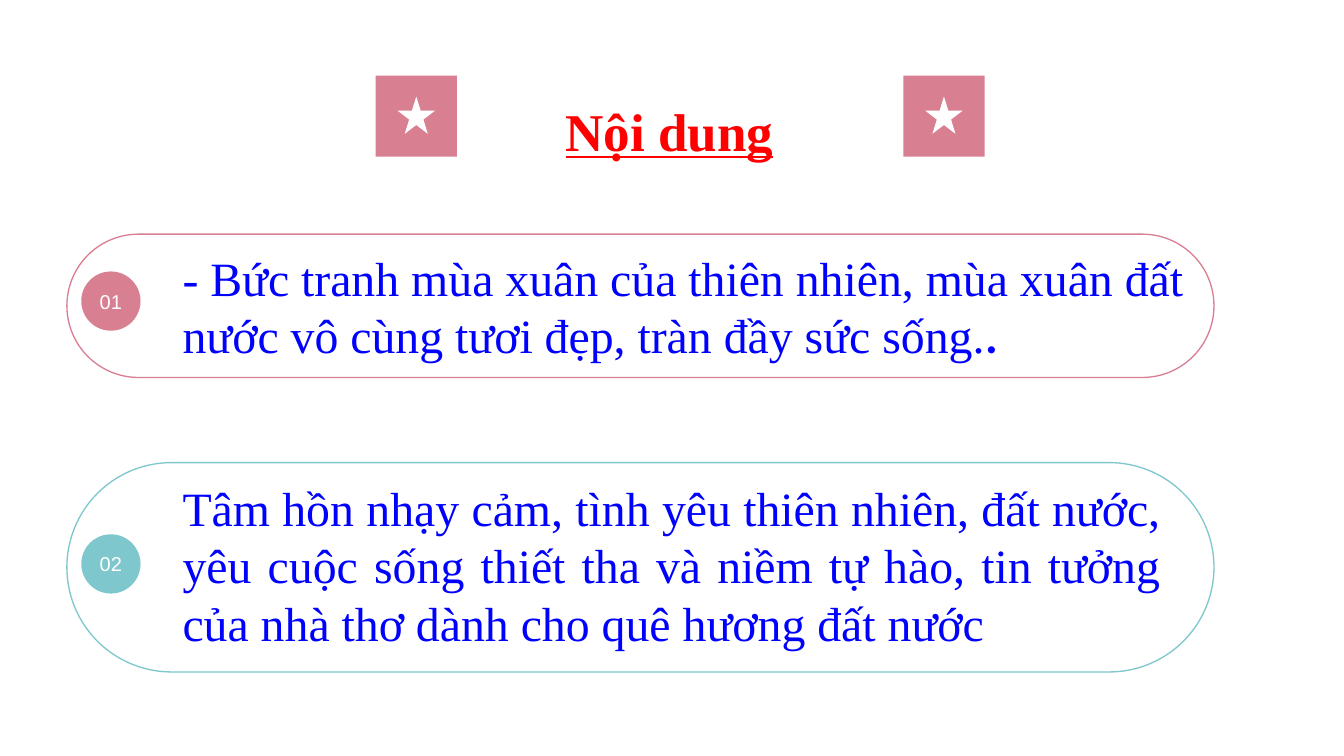
import pptx
import pptx.util
import pptx.dml.color
import pptx.enum.shapes
import pptx.enum.text

Inches, Pt = pptx.util.Inches, pptx.util.Pt
RGB = pptx.dml.color.RGBColor.from_string
SHAPE = pptx.enum.shapes.MSO_SHAPE
ALIGN = pptx.enum.text.PP_ALIGN
ANCHOR = pptx.enum.text.MSO_ANCHOR
COLORS = {"pink": "D97F92", "teal": "7EC7CD", "red": "FF0000",
          "blue": "0000FF", "white": "FFFFFF"}

prs = pptx.Presentation()
prs.slide_width, prs.slide_height = Inches(14.06), Inches(7.91)
s = prs.slides.add_slide(prs.slide_layouts[5])


def add_text(sp, text, size=36, font="Times New Roman", color="blue", bold=False,
             underline=False, align=ALIGN.LEFT, anchor=ANCHOR.TOP,
             spacing=1.0, inset=(0.13, 0.06), tail=""):
    tf = sp.text_frame
    tf.word_wrap = True
    tf.auto_size = pptx.enum.text.MSO_AUTO_SIZE.NONE
    tf.vertical_anchor = anchor
    tf.margin_left = tf.margin_right = Inches(inset[0])
    tf.margin_top = tf.margin_bottom = Inches(inset[1])
    p = tf.paragraphs[0]
    p.alignment, p.line_spacing = align, spacing
    # The tail is a bold ending in a second font
    for part, name, heavy in ((text, font, bold), (tail, "Calibri", True)):
        if part:
            r = p.add_run()
            r.text = part
            r.font.name, r.font.size = name, Pt(size)
            r.font.bold, r.font.underline = heavy, underline
            r.font.color.rgb = RGB(COLORS[color])


def add_shape(kind, x, y, w, h, fill=None, line=None):
    sp = s.shapes.add_shape(kind, Inches(x), Inches(y), Inches(w), Inches(h))
    sp.shadow.inherit = False
    if fill:
        sp.fill.solid()
        sp.fill.fore_color.rgb = RGB(COLORS[fill])
    else:
        sp.fill.background()
    if line:
        sp.line.color.rgb = RGB(COLORS[line])
        sp.line.width = Pt(1)
    else:
        sp.line.fill.background()
    return sp


# Title
title = s.shapes.title
title.left, title.top = Inches(4.28), Inches(0.7)
title.width, title.height = Inches(5.45), Inches(0.97)
add_text(title, "Nội dung", size=40, color="red", bold=True, underline=True,
         align=ALIGN.CENTER, spacing=1.4)

# Star badges on both sides of the title
for x in (3.93, 9.45):
    add_shape(SHAPE.RECTANGLE, x, 0.79, 0.85, 0.85, fill="pink")
    add_shape(SHAPE.STAR_5_POINT, x + 0.23, 1.01, 0.39, 0.39, fill="white")

# Numbered points: color, pill top and height, badge top, text box, text
points = [
    ("pink", 2.45, 1.5, 2.84, (2.54, 11, 1.34), ALIGN.LEFT,
     "- Bức tranh mùa xuân của thiên nhiên, mùa xuân đất nước vô cùng "
     "tươi đẹp, tràn đầy sức sống.", "."),
    ("teal", 4.84, 2.19, 5.59, (4.95, 10.5, 1.94), ALIGN.JUSTIFY,
     "Tâm hồn nhạy cảm, tình yêu thiên nhiên, đất nước, yêu cuộc sống "
     "thiết tha và niềm tự hào, tin tưởng của nhà thơ dành cho quê hương "
     "đất nước", ""),
]
for n, (color, top, height, badge_top, box, align, text, tail) in enumerate(points, 1):
    pill = add_shape(SHAPE.ROUNDED_RECTANGLE, 0.7, top, 12, height, line=color)
    pill.adjustments[0] = 0.5
    badge = add_shape(SHAPE.OVAL, 0.85, badge_top, 0.62, 0.62, fill=color)
    add_text(badge, f"{n:02}", size=15.1, font="Arial", color="white",
             align=ALIGN.CENTER, anchor=ANCHOR.MIDDLE, inset=(0.08, 0.04))
    y, w, h = box
    sp = s.shapes.add_textbox(Inches(1.78), Inches(y), Inches(w), Inches(h))
    add_text(sp, text, align=align, tail=tail)

prs.save("out.pptx")
